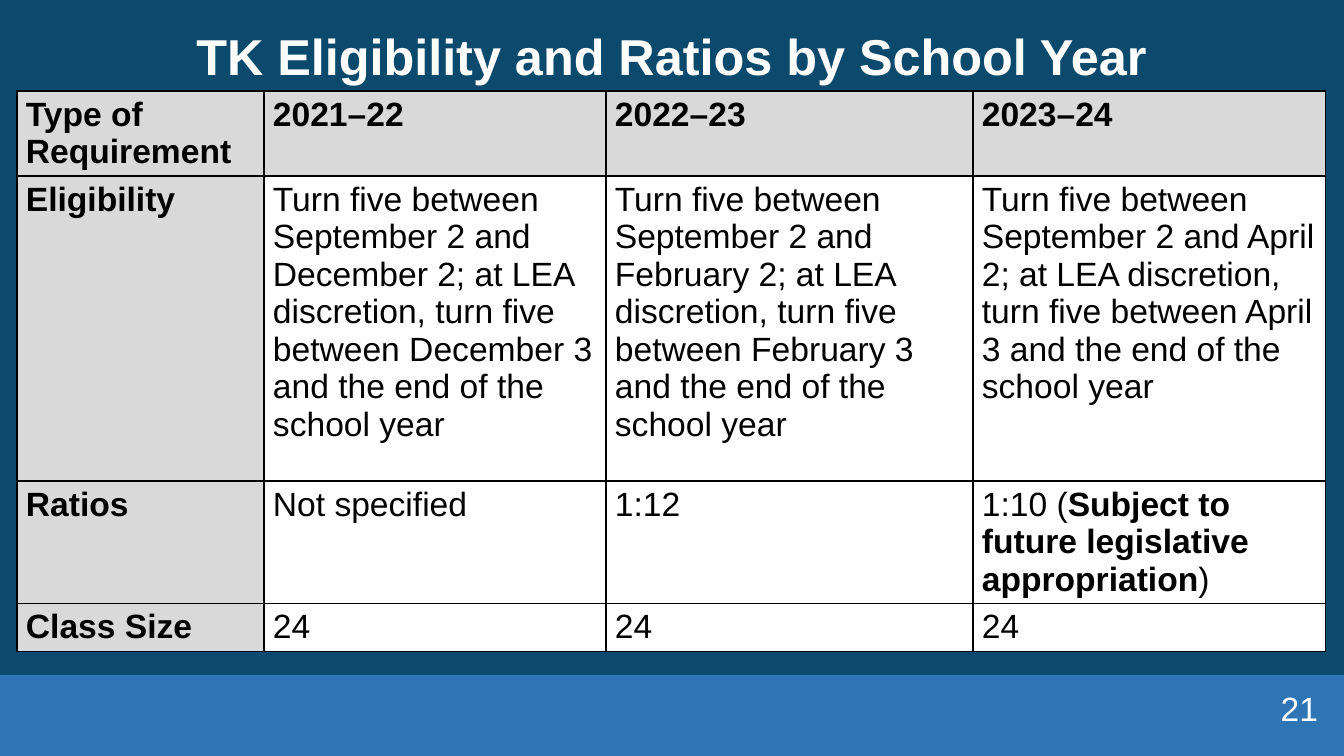
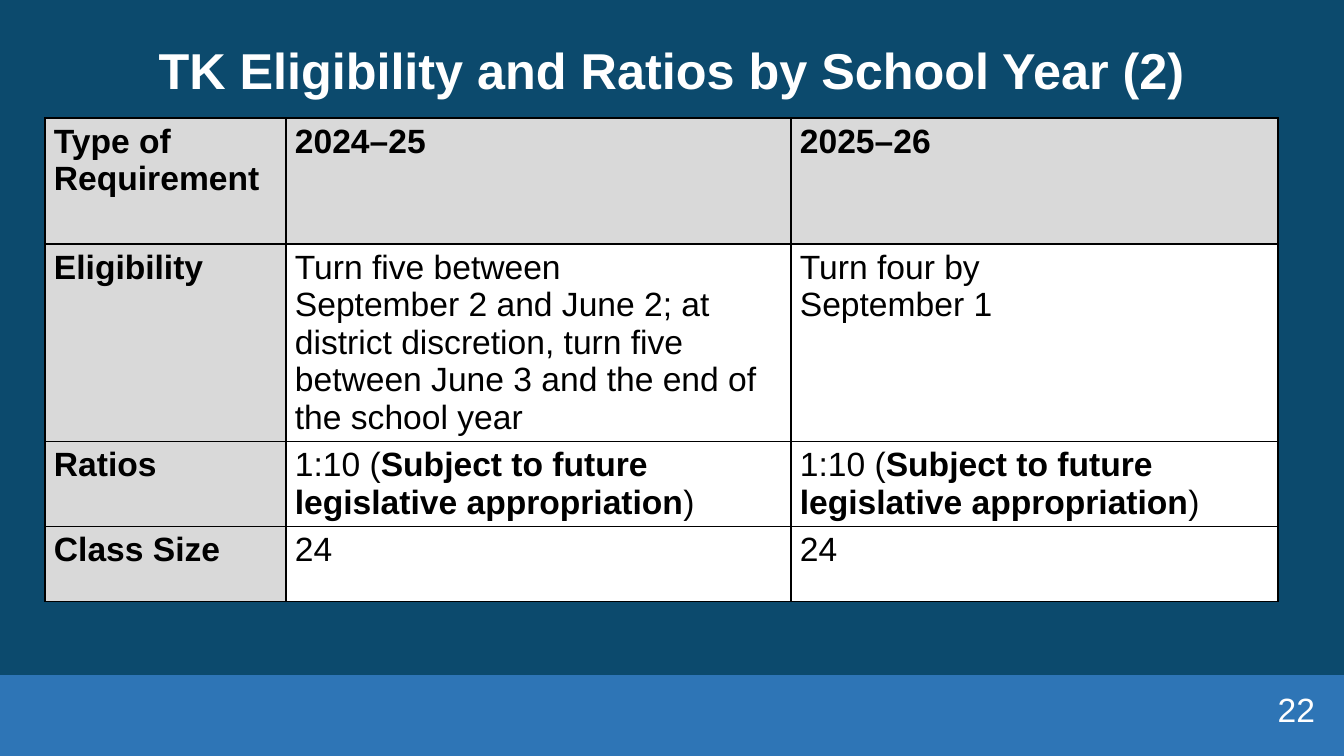
from lxml.etree import SubElement
from pptx import Presentation
from pptx.dml.color import RGBColor
from pptx.enum.shapes import MSO_SHAPE
from pptx.enum.text import MSO_ANCHOR, PP_ALIGN
from pptx.oxml.ns import qn
from pptx.util import Emu, Pt

NAVY = RGBColor(0x0C, 0x4A, 0x6D)
BLUE = RGBColor(0x2E, 0x75, 0xB6)
GRAY = RGBColor(0xD9, 0xD9, 0xD9)
WHITE = RGBColor(0xFF, 0xFF, 0xFF)
BLACK = RGBColor(0x00, 0x00, 0x00)
FONT = "Arial"
W, H, BAND_TOP = 1344, 756, 675

SUBJECT = "1:10 (*Subject to future legislative appropriation*)"

# Cells: a line break starts a paragraph, asterisks enclose bold text.
SLIDES = [
    dict(
        title="TK Eligibility and Ratios by School Year", title_top=-14,
        number="21", number_at=(1218, 698),
        table_at=(17, 91), cols=[247, 342, 367, 353], rows=[84, 305, 122, 46],
        cells=[
            ["Type of Requirement", "2021–22", "2022–23", "2023–24"],
            ["Eligibility",
             "Turn five between\nSeptember 2 and\nDecember 2; at LEA discretion, turn five "
             "between December 3 and the end of the school year",
             "Turn five between\nSeptember 2 and\nFebruary 2; at LEA discretion, turn five "
             "between February 3 and the end of the school year",
             "Turn five between\nSeptember 2 and April 2; at LEA discretion, turn five "
             "between April 3 and the end of the school year"],
            ["Ratios", "Not specified", "1:12", SUBJECT],
            ["Class Size", "24", "24", "24"],
        ],
    ),
    dict(
        title="TK Eligibility and Ratios by School Year (2)", title_top=0,
        number="22", number_at=(1215, 699),
        table_at=(45, 118), cols=[241, 505, 487], rows=[126, 197, 85, 75],
        cells=[
            ["Type of Requirement", "2024–25", "2025–26"],
            ["Eligibility",
             "Turn five between\nSeptember 2 and June 2; at district discretion, turn five "
             "between June 3 and the end of the school year",
             "Turn four by\nSeptember 1"],
            ["Ratios", SUBJECT, SUBJECT],
            ["Class Size", "24", "24"],
        ],
    ),
]


def px(*lengths):
    return [Emu(round(n * 914400 / 100.8)) for n in lengths]


def style(p, size, color, bold=False, align=PP_ALIGN.LEFT):
    p.alignment = align
    p.font.name, p.font.size, p.font.bold = FONT, Pt(size), bold
    p.font.color.rgb = color


prs = Presentation()
prs.slide_width, prs.slide_height = px(W, H)
master = prs.slide_master
master.background.fill.solid()
master.background.fill.fore_color.rgb = NAVY

for data in SLIDES:
    s = prs.slides.add_slide(prs.slide_layouts[5])

    title = s.shapes.title
    title.left, title.top, title.width, title.height = px(17, data["title_top"], 1310, 146)
    title.text_frame.text = data["title"]
    title.text_frame.vertical_anchor = MSO_ANCHOR.MIDDLE
    p = title.text_frame.paragraphs[0]
    style(p, 36, WHITE, True, PP_ALIGN.CENTER)
    p.line_spacing = 0.9

    cols, rows = data["cols"], data["rows"]
    table = s.shapes.add_table(len(rows), len(cols),
                               *px(*data["table_at"], sum(cols), sum(rows))).table
    table.first_row = table.horz_banding = False
    for column, width in zip(table.columns, px(*cols)):
        column.width = width
    for row, height in zip(table.rows, px(*rows)):
        row.height = height

    for i, texts in enumerate(data["cells"]):
        for j, text in enumerate(texts):
            cell = table.cell(i, j)
            heading = i == 0 or j == 0
            cell.fill.solid()
            cell.fill.fore_color.rgb = GRAY if heading else WHITE
            cell.margin_left, cell.margin_right = px(9, 9)
            tf = cell.text_frame
            for n, line in enumerate(text.split("\n")):
                p = tf.add_paragraph() if n else tf.paragraphs[0]
                style(p, 24, BLACK, heading)
                for k, part in enumerate(line.split("*")):
                    r = p.add_run()
                    r.text = part
                    if k % 2:
                        r.font.bold = True

            # Borders come before the fill in the cell properties.
            props = cell.fill._xPr
            for k, side in enumerate(("a:lnL", "a:lnR", "a:lnT", "a:lnB")):
                ln = SubElement(props, qn(side), w=str(Pt(1)))
                fill = SubElement(ln, qn("a:solidFill"))
                SubElement(fill, qn("a:srgbClr"), val=str(BLACK))
                props.insert(k, ln)

    box = s.shapes.add_textbox(*px(*data["number_at"], 100, 30))
    tf = box.text_frame
    tf.word_wrap = True
    tf.margin_left = tf.margin_top = tf.margin_right = tf.margin_bottom = 0
    tf.vertical_anchor = MSO_ANCHOR.BOTTOM
    tf.text = data["number"]
    style(tf.paragraphs[0], 24, WHITE, align=PP_ALIGN.RIGHT)

# The band is drawn once and moved to the master, behind everything else.
band = s.shapes.add_shape(MSO_SHAPE.RECTANGLE, *px(0, BAND_TOP, W, H - BAND_TOP))
band.shadow.inherit = False
band.fill.solid()
band.fill.fore_color.rgb = BLUE
band.line.fill.background()
master.shapes.element.insert(2, band.element)

prs.save("out.pptx")
